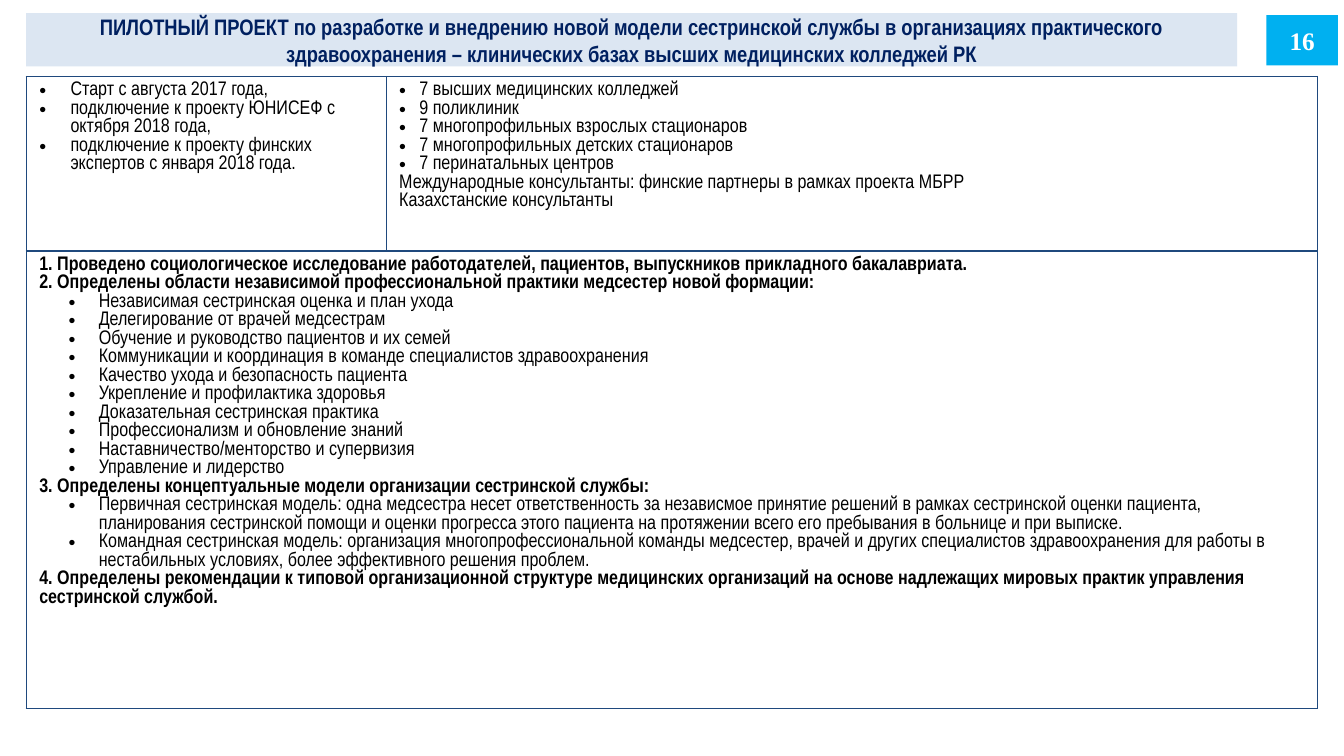
from lxml.etree import SubElement
from pptx import Presentation
from pptx.dml.color import RGBColor
from pptx.enum.shapes import MSO_SHAPE as Shape
from pptx.enum.text import MSO_ANCHOR as Anchor, PP_ALIGN as Align
from pptx.oxml.ns import qn
from pptx.util import Inches, Pt

COLORS = {"title_fill": "DCE6F2", "title_text": "002060", "number_fill": "00B0F0",
          "white": "FFFFFF", "black": "000000", "border": "1F497D"}
NARROW = "Arial Narrow"
TITLE = ("ПИЛОТНЫЙ ПРОЕКТ по разработке и внедрению новой модели сестринской службы "
         "в организациях практического здравоохранения – клинических базах высших "
         "медицинских колледжей РК")
TIMELINE = [("bullet", text) for text in (
    "Старт с августа 2017 года,",
    "подключение к проекту ЮНИСЕФ с октября 2018 года,",
    "подключение к проекту финских экспертов с января 2018 года.")]
PARTICIPANTS = [("bullet", text) for text in (
    "7 высших медицинских колледжей",
    "9 поликлиник",
    "7 многопрофильных взрослых стационаров",
    "7 многопрофильных детских стационаров",
    "7 перинатальных центров")] + [
    ("plain", "Международные консультанты: финские партнеры в рамках проекта МБРР"),
    ("plain", "Казахстанские консультанты")]
RESULTS = [
    ("bold", "1. Проведено социологическое исследование работодателей, пациентов, "
             "выпускников прикладного бакалавриата."),
    ("bold", "2. Определены области независимой профессиональной практики медсестер "
             "новой формации:"),
    ("bullet", "Независимая сестринская оценка и план ухода"),
    ("bullet", "Делегирование от врачей медсестрам"),
    ("bullet", "Обучение и руководство пациентов и их семей"),
    ("bullet", "Коммуникации и координация в команде специалистов здравоохранения"),
    ("bullet", "Качество ухода и безопасность пациента"),
    ("bullet", "Укрепление и профилактика здоровья"),
    ("bullet", "Доказательная сестринская практика"),
    ("bullet", "Профессионализм и обновление знаний"),
    ("bullet", "Наставничество/менторство и супервизия"),
    ("bullet", "Управление и лидерство"),
    ("bold", "3. Определены концептуальные модели организации сестринской службы:"),
    ("bullet", "Первичная сестринская модель: одна медсестра несет ответственность за "
               "независмое принятие решений в рамках сестринской оценки пациента, "
               "планирования сестринской помощи и оценки прогресса этого пациента на "
               "протяжении всего его пребывания в больнице и при выписке."),
    ("bullet", "Командная сестринская модель: организация многопрофессиональной команды "
               "медсестер, врачей и других специалистов здравоохранения для работы в "
               "нестабильных условиях, более эффективного решения проблем."),
    ("bold", "4. Определены рекомендации к типовой организационной структуре медицинских "
             "организаций на основе надлежащих мировых практик управления сестринской "
             "службой.")]


def set_font(para, name, size, color, bold):
    """Set the font of a whole paragraph."""
    font = para.font
    font.name, font.size, font.bold = name, Pt(size), bold
    font.color.rgb = RGBColor.from_string(COLORS[color])


def add_panel(page, box, fill, text, name, size, color):
    """Add a filled rectangle with bold centred text."""
    panel = page.shapes.add_shape(Shape.RECTANGLE, *map(Inches, box))
    panel.shadow.inherit = False
    panel.fill.solid()
    panel.fill.fore_color.rgb = RGBColor.from_string(COLORS[fill])
    panel.line.fill.background()
    frame = panel.text_frame
    frame.word_wrap = True
    frame.vertical_anchor = Anchor.MIDDLE
    frame.margin_top = frame.margin_bottom = 0
    para = frame.paragraphs[0]
    para.text, para.alignment = text, Align.CENTER
    set_font(para, name, size, color, True)


def add_bullet(para, indent, hanging):
    """Give a paragraph a round bullet with a hanging indent."""
    props = para._p.get_or_add_pPr()
    props.set("marL", str(Inches(indent)))
    props.set("indent", str(-Inches(hanging)))
    SubElement(props, qn("a:buFont"), typeface="Arial")
    SubElement(props, qn("a:buChar"), char="•")


def style_cell(cell):
    """Draw the four borders of a cell and leave it unfilled."""
    cell.margin_left = cell.margin_right = Inches(0.13)
    cell.margin_top = cell.margin_bottom = Inches(0.05)
    props = cell._tc.get_or_add_tcPr()
    for side in ("lnL", "lnR", "lnT", "lnB"):
        line = SubElement(props, qn(f"a:{side}"), w=str(Pt(1)))
        fill = SubElement(line, qn("a:solidFill"))
        SubElement(fill, qn("a:srgbClr"), val=COLORS["border"])
    cell.fill.background()


def fill_cell(cell, lines, indent, hanging):
    """Write plain, bold and bulleted lines into a cell."""
    frame = cell.text_frame
    for index, (kind, text) in enumerate(lines):
        para = frame.add_paragraph() if index else frame.paragraphs[0]
        para.text = text
        set_font(para, NARROW, 14, "black", kind == "bold")
        if kind == "bullet":
            add_bullet(para, indent, hanging)


def add_project_table(page, box):
    """Add the table of dates, participants and results."""
    left, top, width, height = box
    first_width, first_height = 3.57, 1.73
    table = page.shapes.add_table(2, 2, *map(Inches, box)).table
    table.first_row = table.horz_banding = False
    for column, size in zip(table.columns, (first_width, width - first_width)):
        column.width = Inches(size)
    for row, size in zip(table.rows, (first_height, height - first_height)):
        row.height = Inches(size)
    for cell in table.iter_cells():
        style_cell(cell)
    table.cell(1, 0).merge(table.cell(1, 1))
    fill_cell(table.cell(0, 0), TIMELINE, 0.31, 0.31)
    fill_cell(table.cell(0, 1), PARTICIPANTS, 0.2, 0.2)
    fill_cell(table.cell(1, 0), RESULTS, 0.59, 0.3)


def main():
    """Build the slide and save it."""
    deck = Presentation()
    deck.slide_width, deck.slide_height = Inches(13.33), Inches(7.5)
    page = deck.slides.add_slide(deck.slide_layouts[6])
    add_panel(page, (0.26, 0.13, 12.01, 0.53), "title_fill", TITLE, NARROW, 16, "title_text")
    add_project_table(page, (0.26, 0.76, 12.81, 6.27))
    add_panel(page, (12.56, 0.15, 0.71, 0.5), "number_fill", "16", "Times New Roman", 18, "white")
    deck.save("out.pptx")


if __name__ == "__main__":
    main()
